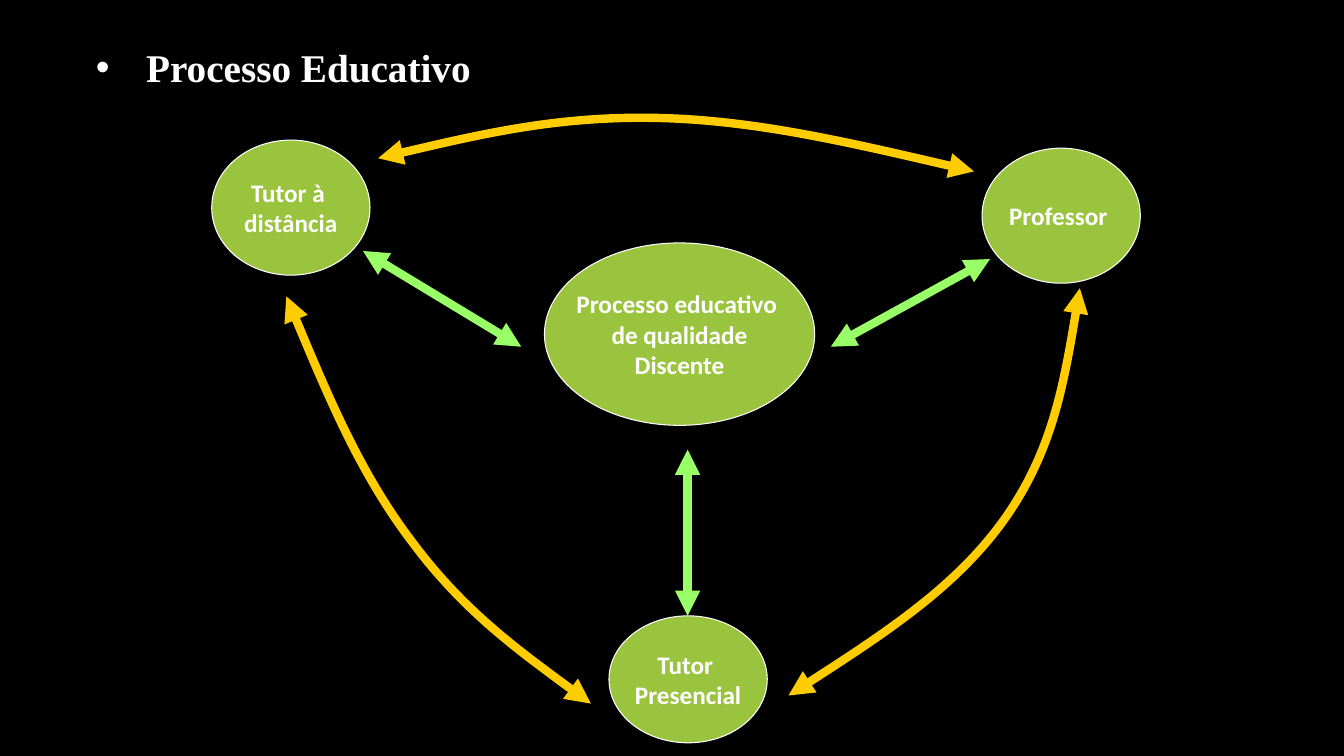
from pptx import Presentation
from pptx.dml.color import RGBColor
from pptx.enum.shapes import MSO_CONNECTOR, MSO_SHAPE
from pptx.enum.text import MSO_ANCHOR, MSO_AUTO_SIZE, PP_ALIGN
from pptx.oxml.ns import qn
from pptx.util import Inches, Pt
from lxml.etree import SubElement

COLORS = {"back": "000000", "text": "FFFFFF", "node": "9AC43E",
          "spoke": "99FF66", "ring": "FFCC00"}

# The grid has one-inch columns and rows; diagram parts are relative to its box
DIAGRAM = (2, 1)
NODES = [  # text, column, row, width, height
    ("Processo educativo \nde qualidade\nDiscente", 3.4, 1.41, 2.68, 1.81),
    ("Tutor à \ndistância", 0.1, 0.39, 1.57, 1.34),
    ("Professor ", 7.74, 0.47, 1.57, 1.34),
    ("Tutor \nPresencial", 4.04, 5.11, 1.57, 1.26),
]
SPOKES = [  # both ends
    ((1.6, 1.49), (3.17, 2.44)),
    ((4.82, 3.46), (4.82, 5.11)),
    ((6.24, 2.44), (7.82, 1.57)),
]
CURVES = [  # start, then three points for each Bezier segment
    [(1.75, 0.57), (2.64, 0.36), (3.53, 0.15), (4.51, 0.17),
     (5.49, 0.19), (6.58, 0.45), (7.66, 0.7)],
    [(3.86, 5.98), (3.23, 5.52), (2.59, 5.05), (2.09, 4.38),
     (1.58, 3.71), (1.21, 2.83), (0.84, 1.94)],
    [(8.71, 1.86), (8.58, 2.66), (8.44, 3.47), (7.97, 4.14),
     (7.49, 4.82), (6.66, 5.36), (5.82, 5.9)],
]


def rgb(name):
    return RGBColor.from_string(COLORS[name])


def style_runs(tf, font, size):
    for p in tf.paragraphs:
        for r in p.runs:
            r.font.name, r.font.size, r.font.bold = font, Pt(size), True
            r.font.color.rgb = rgb("text")


def style_arrow(shape, color):
    shape.line.color.rgb = rgb(color)
    shape.line.width = Pt(6)
    ln = shape.line._get_or_add_ln()
    for end in ("a:headEnd", "a:tailEnd"):
        SubElement(ln, qn(end), type="triangle")


def add_title(s, left, top, width, height):
    title = s.shapes.title
    title.left, title.top = Inches(left), Inches(top)
    title.width, title.height = Inches(width), Inches(height)
    tf = title.text_frame
    tf.text = "Processo Educativo"
    tf.vertical_anchor = MSO_ANCHOR.TOP
    tf.auto_size = MSO_AUTO_SIZE.NONE
    p = tf.paragraphs[0]
    p.alignment = PP_ALIGN.LEFT
    # Hanging bullet
    pPr = p._p.get_or_add_pPr()
    pPr.set("marL", str(Inches(0.5)))
    pPr.set("indent", str(-Inches(0.5)))
    SubElement(pPr, qn("a:buFont"), typeface="Arial")
    SubElement(pPr, qn("a:buChar"), char="•")
    style_runs(tf, "Times New Roman", 28)


def add_node(s, text, left, top, width, height):
    sp = s.shapes.add_shape(MSO_SHAPE.OVAL, Inches(left), Inches(top),
                            Inches(width), Inches(height))
    sp.shadow.inherit = False
    sp.fill.solid()
    sp.fill.fore_color.rgb = rgb("node")
    sp.line.color.rgb = rgb("text")
    sp.line.width = Pt(0.75)
    tf = sp.text_frame
    tf.text = text
    tf.word_wrap = False
    tf.vertical_anchor = MSO_ANCHOR.MIDDLE
    for p in tf.paragraphs:
        p.alignment = PP_ALIGN.CENTER
    style_runs(tf, "Calibri", 18)


def add_spoke(s, start, end):
    line = s.shapes.add_connector(MSO_CONNECTOR.STRAIGHT,
                                  *(Inches(v) for v in start + end))
    style_arrow(line, "spoke")
    SubElement(line._element.spPr, qn("a:effectLst"))


def add_curve(s, points):
    pts = [(Inches(x), Inches(y)) for x, y in points]
    builder = s.shapes.build_freeform(*pts[0])
    builder.add_line_segments(pts[1:], close=False)
    sp = builder.convert_to_shape()
    sp.shadow.inherit = False
    sp.fill.background()
    style_arrow(sp, "ring")
    # Turn each three straight segments into one cubic Bezier
    path = sp._element.spPr.find(".//" + qn("a:path"))
    segments = path.findall(qn("a:lnTo"))
    for i in range(0, len(segments), 3):
        bezier = SubElement(path, qn("a:cubicBezTo"))
        for segment in segments[i:i + 3]:
            bezier.append(segment[0])
            path.remove(segment)


def add_diagram(s, left, top):
    def place(point):
        return left + point[0], top + point[1]

    for text, x, y, width, height in NODES:
        add_node(s, text, *place((x, y)), width, height)
    for start, end in SPOKES:
        add_spoke(s, place(start), place(end))
    for points in CURVES:
        add_curve(s, [place(point) for point in points])


def main():
    prs = Presentation()
    prs.slide_width, prs.slide_height = Inches(13.33), Inches(7.5)
    s = prs.slides.add_slide(prs.slide_layouts[5])
    s.background.fill.solid()
    s.background.fill.fore_color.rgb = rgb("back")
    add_title(s, 0.85, 0.38, 6.55, 0.57)
    add_diagram(s, *DIAGRAM)
    prs.save("out.pptx")


if __name__ == "__main__":
    main()
